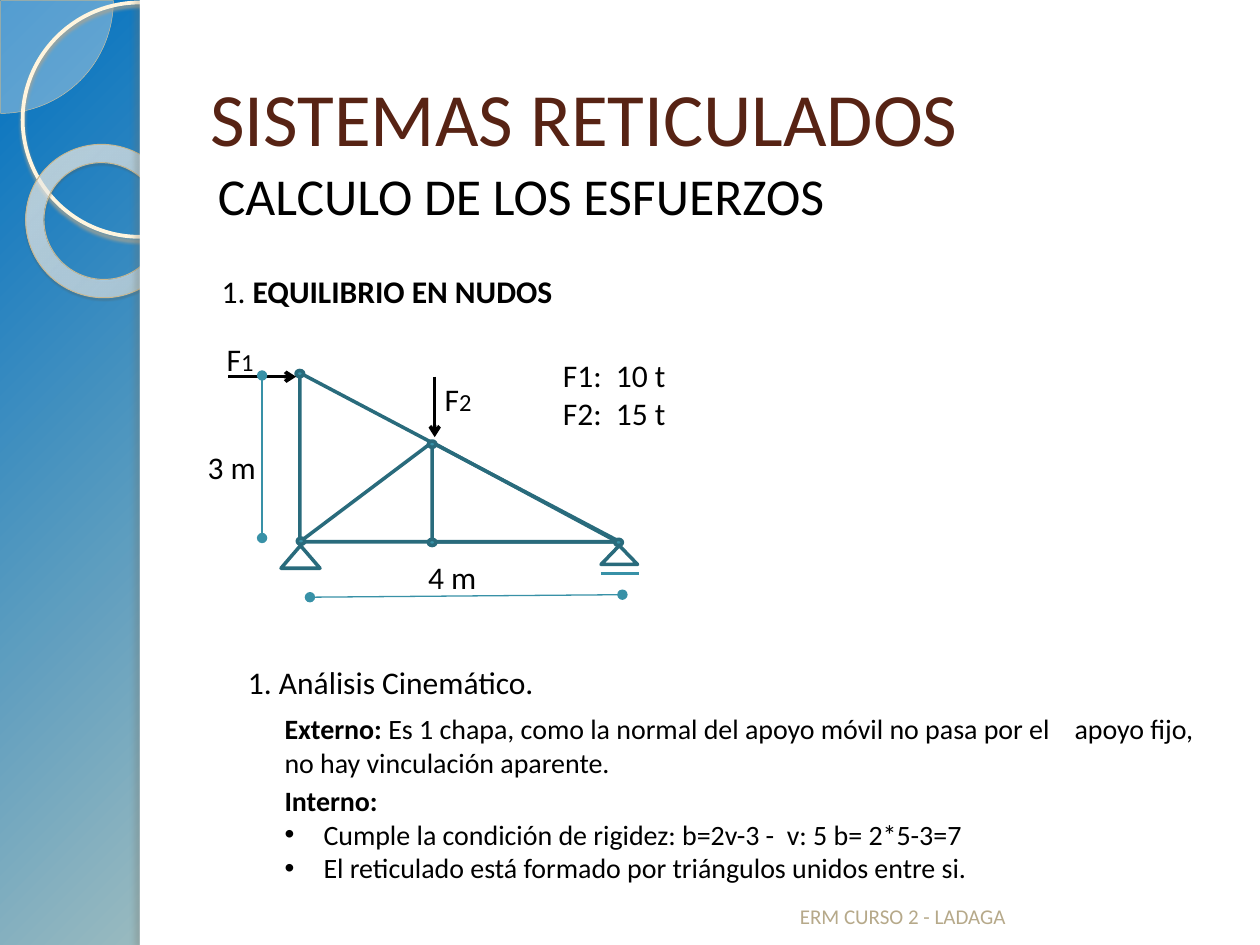
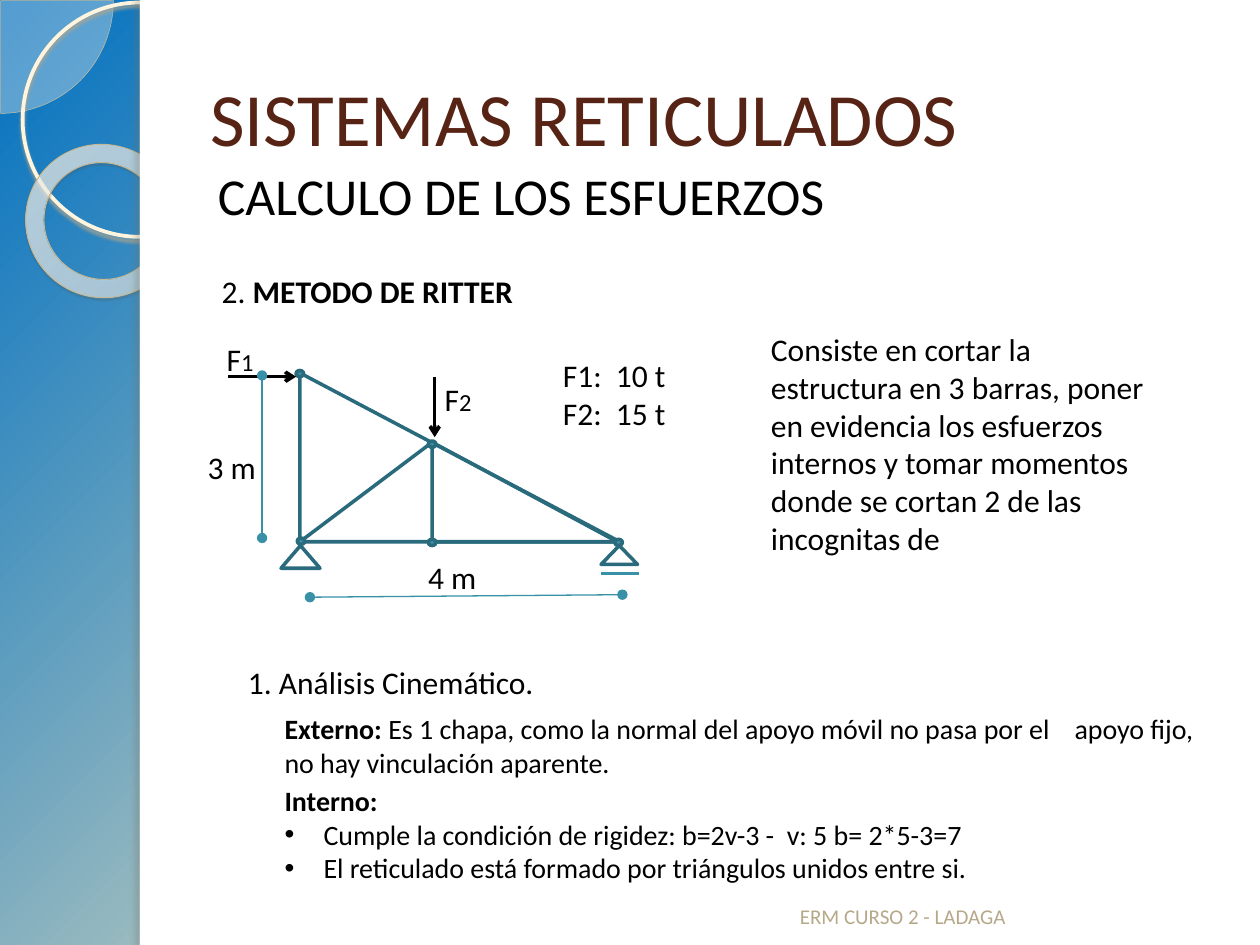
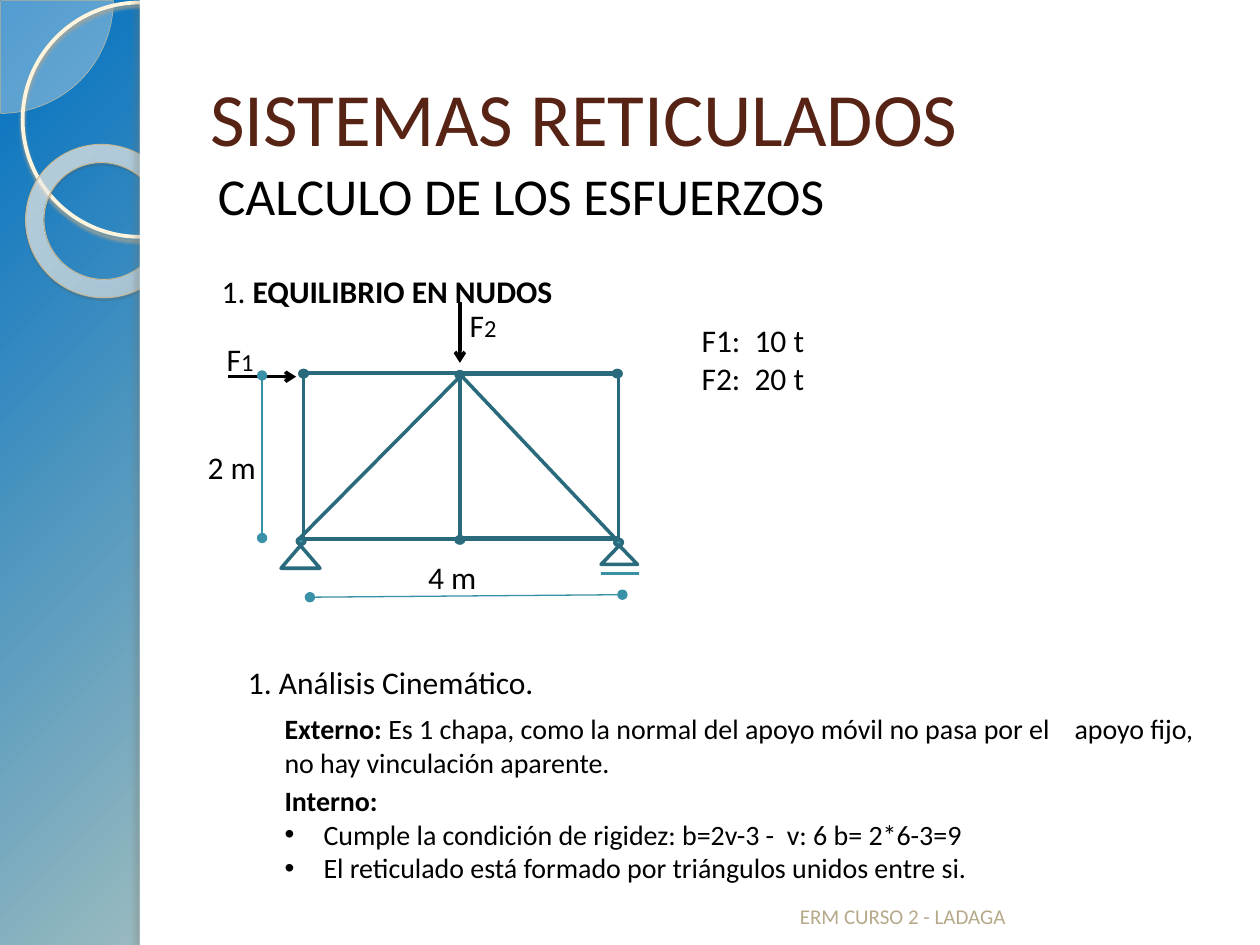
from lxml.etree import SubElement
from pptx import Presentation
from pptx.dml.color import RGBColor
from pptx.enum.shapes import MSO_CONNECTOR as Link, MSO_SHAPE as Form
from pptx.enum.text import MSO_ANCHOR as Anchor
from pptx.oxml.ns import qn
from pptx.util import Inches, Pt

# Shared look
FONT = "Calibri"
INK, WHITE = "000000", "FFFFFF"
TITLE, FOOT = "572314", "B6A98A"
BAR, TEAL = "296B7C", "3891A7"
BACK = [(0, "0070C0", 100), (82, "FFEBBE", 100), (100, "C9B484", 100)]
RING = [(0, "FFFCF6", 70), (70, "FFFEFB", 55), (100, "F0D28E", 60)]


def color(code):
    return RGBColor.from_string(code)


def inches(nums):
    return [Inches(n) for n in nums]


def node(parent, tag, **attrs):
    """Add one DrawingML element with its attributes."""
    return SubElement(parent, qn("a:" + tag), {k: str(v) for k, v in attrs.items()})


def tone(parent, code, alpha):
    clr = node(parent, "srgbClr", val=code)
    if alpha < 100:
        node(clr, "alpha", val=alpha * 1000)


def blend(fill, root, stops, rect):
    """Give a fill a circular gradient around a focus rectangle in percent."""
    fill.gradient()
    grad = root.find(".//" + qn("a:gradFill"))
    for child in list(grad):
        grad.remove(child)
    group = node(grad, "gsLst")
    for pos, code, alpha in stops:
        tone(node(group, "gs", pos=pos * 1000), code, alpha)
    focus = {side: n * 1000 for side, n in zip("ltrb", rect)}
    node(node(grad, "path", path="circle"), "fillToRect", **focus)


# Basic elements
def shape(slide, form, at, fill=None, line=None, width=2.0):
    item = slide.shapes.add_shape(form, *inches(at))
    item.shadow.inherit = False
    if fill:
        item.fill.solid()
        item.fill.fore_color.rgb = color(fill)
    else:
        item.fill.background()
    if line:
        item.line.color.rgb = color(line)
        item.line.width = Pt(width)
    else:
        item.line.fill.background()
    return item


def shade(item, code, alpha, blur, dist, angle):
    effects = item.element.spPr.find(qn("a:effectLst"))
    outer = node(effects, "outerShdw", blurRad=Pt(blur), dist=Pt(dist),
                 dir=angle * 60000, algn="tl", rotWithShape=0)
    tone(outer, code, alpha)


def line(slide, start, end, tint=BAR, width=2.0, head=None, tail=None):
    item = slide.shapes.add_connector(Link.STRAIGHT, *inches(start + end))
    item.line.color.rgb = color(tint)
    item.line.width = Pt(width)
    ln = item.line._get_or_add_ln()
    if head:
        node(ln, "headEnd", type=head)
    if tail:
        node(ln, "tailEnd", type=tail)
    node(item.element.spPr, "effectLst")


def text(slide, at, *rows, size=18, tint=INK, anchor=Anchor.TOP,
         indent=0, tab=None, dots=False):
    """Write rows of runs; a run is a string or (string, font settings)."""
    frame = slide.shapes.add_textbox(*inches(at)).text_frame
    frame.word_wrap = True
    frame.vertical_anchor = anchor
    for n, row in enumerate(rows):
        para = frame.paragraphs[0] if n == 0 else frame.add_paragraph()
        props = para._p.get_or_add_pPr()
        if indent:
            props.set("marL", str(Inches(indent)))
        if dots and n:
            props.set("marL", str(Inches(0.31)))
            props.set("indent", str(Inches(-0.31)))
            node(props, "buFont", typeface="Arial")
            node(props, "buChar", char="•")
        if tab:
            node(node(props, "tabLst"), "tab", pos=Inches(tab), algn="l")
        para.font.name = FONT
        para.font.size = Pt(size)
        para.font.color.rgb = color(tint)
        for part in [row] if isinstance(row, str) else row:
            words, style = (part, {}) if isinstance(part, str) else part
            run = para.add_run()
            run.text = words
            for key, value in style.items():
                setattr(run.font, key, value)
    return frame


# Shared slide frame
def band(slide):
    pie = shape(slide, Form.PIE, (-0.89, -0.89, 1.79, 1.79), "FEFAF4", "D3C39F", 0.25)
    pie.adjustments[0] = 0
    pie.adjustments[1] = 54.02
    clr = pie.element.spPr.find(qn("a:solidFill"))[0]
    node(clr, "alpha", val=33000)
    hoop = shape(slide, Form.OVAL, (0.18, 0.02, 1.86, 1.86), None, "FFF5DE", 2.15)
    shade(hoop, "B0A68F", 85, 2, 2, 90)
    ring = shape(slide, Form.DONUT, (0.2, 1.15, 1.23, 1.21), None, "C7B893", 0.58)
    ring.adjustments[0] = 0.12
    ring.rotation = 38.6
    blend(ring.fill, ring.element.spPr, RING, (-408, -50, 508, 150))
    shade(ring, "5A5444", 35, 1, 1.2, 75)
    shape(slide, Form.RECTANGLE, (1.11, 0, 8.89, 7.5), WHITE)
    edge = shape(slide, Form.RECTANGLE, (1.11, 0, 0.08, 7.5), WHITE)
    shade(edge, "736F63", 25, 3, 3, 180)


def start(prs, num, topic):
    slide = prs.slides.add_slide(prs.slide_layouts[6])
    band(slide)
    text(slide, (1.22, 2.11, 5.22, 0.54), (num + " ", (topic, {"bold": True})),
         indent=0.44)
    text(slide, (1.57, 0.3, 8.2, 1.25), "SISTEMAS RETICULADOS", size=43,
         tint=TITLE, anchor=Anchor.MIDDLE)
    sub = text(slide, (1.54, 1.31, 8.2, 0.55), "CALCULO DE LOS ESFUERZOS",
               size=29.6, indent=0.09)
    sub.paragraphs[0].line_spacing = 0.9
    text(slide, (6.25, 6.9, 3.17, 0.52), "ERM CURSO 2 - LADAGA", size=12,
         tint=FOOT, anchor=Anchor.BOTTOM)
    return slide


# Truss parts
def joints(slide, spots):
    for x, y in spots:
        shape(slide, Form.OVAL, (x, y, 0.06, 0.05), TEAL, BAR)


def props(slide):
    line(slide, (4.77, 4.55), (5.07, 4.55), TEAL, 1.5)
    for at in ((4.77, 4.33, 0.29, 0.15), (2.23, 4.33, 0.31, 0.18)):
        shape(slide, Form.ISOSCELES_TRIANGLE, at, WHITE, BAR)


def wedge(slide):
    """Triangular truss with five joints."""
    shape(slide, Form.RIGHT_TRIANGLE, (3.43, 3.51, 1.47, 0.79), WHITE, BAR)
    shape(slide, Form.RIGHT_TRIANGLE, (2.38, 2.96, 2.54, 1.34), None, BAR)
    line(slide, (3.43, 3.51), (2.38, 4.3))
    joints(slide, [(4.88, 4.28), (3.4, 3.5), (2.35, 2.94), (2.36, 4.27), (3.4, 4.28)])
    props(slide)


def block(slide):
    """Rectangular truss with six joints."""
    joints(slide, [(4.88, 4.28), (3.62, 2.95), (2.38, 2.94), (2.36, 4.27),
                   (3.62, 4.26), (4.87, 2.94)])
    props(slide)
    shape(slide, Form.RECTANGLE, (3.65, 2.97, 1.26, 1.3), None, BAR)
    shape(slide, Form.RECTANGLE, (2.41, 2.96, 2.5, 1.32), None, BAR)
    for foot in (2.37, 4.89):
        line(slide, (foot, 4.28), (3.66, 2.98))


def force(slide, num, spot, begin, end):
    line(slide, begin, end, INK, tail="arrow")
    text(slide, spot + (0.54, 0.4), ("F", (num, {"size": Pt(14)})))


def loads(slide, spot, top, second, height):
    """Forces, their values and the two dimensions; spot is F2's arrow start."""
    x, y = spot
    force(slide, "1", (1.7, 2.65), (1.81, 2.99), (2.35, 2.99))
    force(slide, "2", (x - 0.02, y - 0.02), spot, (x, y + 0.48))
    text(slide, top + (1.5, 0.71), "F1:\t10 t", f"F2:\t{second} t", tab=0.42)
    for begin, end in (((2.46, 4.74), (4.94, 4.72)), ((2.08, 4.27), (2.08, 2.98))):
        line(slide, begin, end, TEAL, 0.75, "oval", "oval")
    text(slide, (3.3, 4.38, 0.86, 0.4), "4 m")
    text(slide, (1.55, 3.51, 0.86, 0.4), f"{height} m")


def study(slide, nodes):
    """Kinematic analysis for a truss with this many nodes."""
    bold = {"bold": True}
    text(slide, (1.87, 5.21, 7.77, 0.4), "1. Análisis Cinemático.")
    text(slide, (2.16, 5.6, 7.49, 0.64),
         (("Externo: ", bold), "Es 1 chapa, como la normal del apoyo móvil no pasa "
          "por el\tapoyo fijo, no hay vinculación aparente."), size=16, tab=6.27)
    text(slide, (2.16, 6.17, 6.81, 1.18), [("Interno:", bold)],
         f"Cumple la condición de rigidez: b=2v-3 -  v: {nodes} "
         f"b= 2*{nodes}-3={2 * nodes - 3}",
         "El reticulado está formado por triángulos unidos entre si.",
         size=16, dots=True)


def main():
    prs = Presentation()
    prs.slide_width, prs.slide_height = Inches(10), Inches(7.5)
    master = prs.slide_master
    blend(master.background.fill, master.element, BACK, (-24, -20, 124, 120))

    # Slides 1 and 2: triangular truss
    for num, topic in (("1.", "EQUILIBRIO EN NUDOS"), ("2.", "METODO DE RITTER")):
        slide = start(prs, num, topic)
        wedge(slide)
        loads(slide, (3.45, 2.99), (4.37, 2.78), 15, 3)
        study(slide, 5)
    text(slide, (6.02, 2.57, 3.31, 1.92),
         "Consiste en cortar la estructura en 3 barras, poner en evidencia los "
         "esfuerzos internos y tomar momentos donde se cortan 2 de las incognitas de")

    # Slide 3: rectangular truss
    slide = start(prs, "1.", "EQUILIBRIO EN NUDOS")
    loads(slide, (3.65, 2.4), (5.47, 2.5), 20, 2)
    study(slide, 6)
    block(slide)
    prs.save("out.pptx")


if __name__ == "__main__":
    main()
